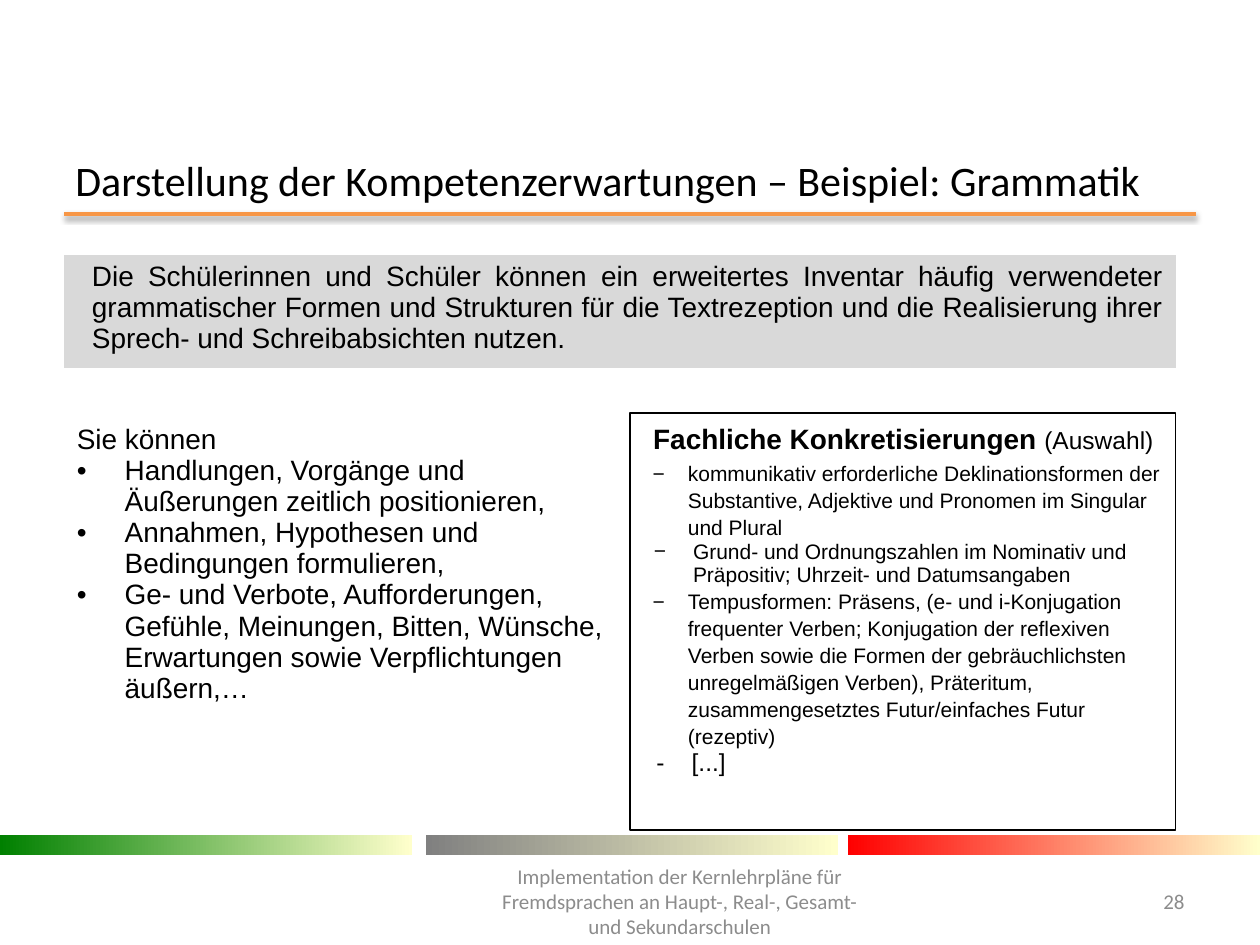
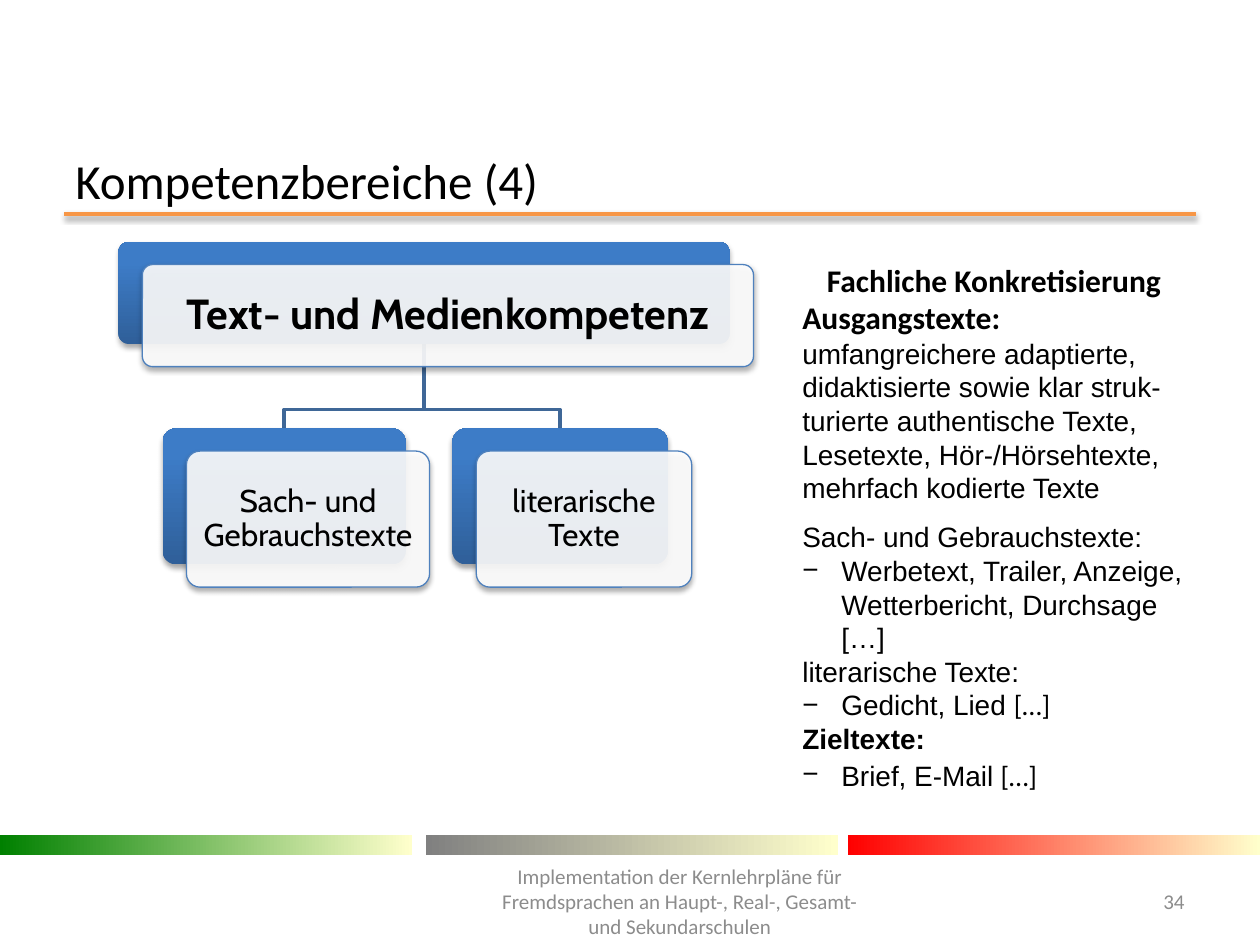
from dataclasses import dataclass
from typing import NamedTuple

from lxml.etree import SubElement
from pptx import Presentation
from pptx.dml.color import RGBColor
from pptx.enum.shapes import MSO_CONNECTOR, MSO_SHAPE
from pptx.enum.text import MSO_ANCHOR, PP_ALIGN
from pptx.oxml.ns import qn
from pptx.util import Inches, Pt


@dataclass(frozen=True)
class Theme:
    """Colours, fonts and type sizes of the whole deck."""
    ink: str = "000000"
    muted: str = "8C8C8C"
    white: str = "FFFFFF"
    rule: str = "F79646"
    statement: str = "D9D9D9"
    cream: str = "FFFFCC"
    bands: tuple[str, ...] = ("008000", "808080", "FF0000")
    node_dark: str = "2F5F99"
    node_light: str = "3D7CC7"
    node_edge: str = "4F81BD"
    branch: str = "3F6797"
    head_font: str = "Calibri"
    body_font: str = "Arial"
    node_font: str = "Cabin"
    footer: int = 12
    small: int = 12
    note: int = 14
    body: int = 16
    heading: int = 18
    root: int = 24
    long_title: int = 24
    title: int = 28


THEME = Theme()
PLAIN_TABLE = "{2D5ABB26-0587-4C30-8999-92F81FD0307C}"
FOOTER = ("Implementation der Kernlehrpläne für Fremdsprachen "
          "an Haupt-, Real-, Gesamt- und Sekundarschulen")


class Box(NamedTuple):
    """Left, top, width and height in inches."""
    left: float
    top: float
    width: float
    height: float

    def lengths(self) -> tuple:
        """Return the four sides as lengths."""
        return tuple(Inches(side) for side in self)


class Span(NamedTuple):
    """A run, with what differs from its paragraph."""
    text: str
    size: int | None = None
    font: str | None = None
    bold: bool | None = None


@dataclass(frozen=True)
class Para:
    """A paragraph; left and hang are its indents in inches."""
    spans: tuple[Span, ...]
    size: int = THEME.body
    font: str = THEME.body_font
    bold: bool = False
    color: str = THEME.ink
    align: PP_ALIGN | None = None
    spacing: float | None = None
    before: int | None = None
    left: float = 0
    hang: float = 0
    bullet: str = ""


class Node(NamedTuple):
    """A diagram node: back card, label, type size, weight and inset."""
    box: Box
    label: str
    size: int
    bold: bool
    inset: float


def para(text: str, **style) -> Para:
    """Make a paragraph of one run."""
    return Para((Span(text),), **style)


def rgb(code: str) -> RGBColor:
    """Turn a hex code into a colour."""
    return RGBColor.from_string(code)


def write(frame, paras: list[Para]) -> None:
    """Fill a text frame with paragraphs."""
    frame.word_wrap = True
    for index, item in enumerate(paras):
        paragraph = frame.add_paragraph() if index else frame.paragraphs[0]
        if item.left:
            properties = paragraph._p.get_or_add_pPr()
            properties.set("marL", str(Inches(item.left)))
            properties.set("indent", str(-Inches(item.hang)))
            if item.bullet:
                SubElement(properties, qn("a:buFont"), typeface=THEME.body_font)
                SubElement(properties, qn("a:buChar"), char=item.bullet)
        if item.align is not None:
            paragraph.alignment = item.align
        if item.spacing:
            paragraph.line_spacing = item.spacing
        if item.before:
            paragraph.space_before = Pt(item.before)
        font = paragraph.font
        font.size, font.name, font.bold = Pt(item.size), item.font, item.bold
        font.color.rgb = rgb(item.color)
        for span in item.spans:
            run = paragraph.add_run()
            run.text = span.text
            if span.size:
                run.font.size = Pt(span.size)
            if span.font:
                run.font.name = span.font
            if span.bold is not None:
                run.font.bold = span.bold


def add_text(slide, box: Box, paras: list[Para], anchor=MSO_ANCHOR.TOP) -> None:
    """Add a wrapping text box."""
    frame = slide.shapes.add_textbox(*box.lengths()).text_frame
    frame.vertical_anchor = anchor
    write(frame, paras)


def add_shadow(drawn, alpha: int, distance: float) -> None:
    """Give a shape or connector a soft shadow below it."""
    effects = SubElement(drawn._element.spPr, qn("a:effectLst"))
    outer = SubElement(effects, qn("a:outerShdw"), blurRad=str(Pt(3.1)),
                       dist=str(Pt(distance)), dir="5400000", rotWithShape="0")
    color = SubElement(outer, qn("a:srgbClr"), val=THEME.ink)
    SubElement(color, qn("a:alpha"), val=str(alpha * 1000))


def fill_gradient(shape, start: str, end: str, angle: int, reach: float = 1) -> None:
    """Fill with two colours, the second reached at a share of the way."""
    shape.fill.gradient()
    shape.fill.gradient_angle = angle
    first, last = shape.fill.gradient_stops
    first.color.rgb, first.position = rgb(start), 0
    last.color.rgb, last.position = rgb(end), reach


def add_frame(slide, title: str, title_size: int, number: int) -> None:
    """Draw title, rule, colour bands and footer."""
    rule = slide.shapes.add_connector(
        MSO_CONNECTOR.STRAIGHT, Inches(0.51), Inches(1.7), Inches(9.49), Inches(1.7))
    rule.line.color.rgb, rule.line.width = rgb(THEME.rule), Pt(2)
    add_shadow(rule, 38, 1.6)
    for left, color in zip((0, 3.38, 6.73), THEME.bands):
        band = slide.shapes.add_shape(
            MSO_SHAPE.RECTANGLE, *Box(left, 6.63, 3.27, 0.16).lengths())
        fill_gradient(band, color, THEME.cream, 0)
        band.line.fill.background()
        band.shadow.inherit = False
    add_text(slide, Box(0.5, 1.23, 9, 0.39),
             [para(title, size=title_size, font=THEME.head_font)], MSO_ANCHOR.MIDDLE)
    for box, text, align in ((Box(3.82, 6.95, 3.15, 0.4), FOOTER, PP_ALIGN.CENTER),
                             (Box(8.86, 6.95, 0.64, 0.4), str(number), PP_ALIGN.RIGHT)):
        add_text(slide, box, [para(text, size=THEME.footer, font=THEME.head_font,
                                   color=THEME.muted, align=align)], MSO_ANCHOR.MIDDLE)


def add_grammar_table(slide) -> None:
    """Draw the expectations table and the border of its details."""
    table = slide.shapes.add_table(3, 2, *Box(0.51, 2.02, 8.82, 4.34).lengths()).table
    table.first_row = table.horz_banding = False
    table._tbl.tblPr.find(qn("a:tableStyleId")).text = PLAIN_TABLE
    for column, width in zip(table.columns, (4.5, 4.32)):
        column.width = Inches(width)
    for row, height in zip(table.rows, (0.78, 0.36, 3.2)):
        row.height = Inches(height)
    for index, color in enumerate((THEME.statement, THEME.white)):
        table.cell(index, 0).merge(table.cell(index, 1))
        for column in range(2):
            cell = table.cell(index, column)
            cell.fill.solid()
            cell.fill.fore_color.rgb = rgb(color)
            cell.text_frame.paragraphs[0].font.size = Pt(THEME.small)
    abilities, details = table.cell(2, 0), table.cell(2, 1)
    for cell in (abilities, details):
        cell.fill.background()

    write(table.cell(0, 0).text_frame, [para(
        "Die Schülerinnen und Schüler können ein erweitertes Inventar häufig "
        "verwendeter grammatischer Formen und Strukturen für die Textrezeption und "
        "die Realisierung ihrer Sprech- und Schreibabsichten nutzen.",
        align=PP_ALIGN.JUSTIFY, left=0.12)])
    goals = ("Handlungen, Vorgänge und Äußerungen zeitlich positionieren,",
             "Annahmen, Hypothesen und Bedingungen formulieren,",
             "Ge- und Verbote, Aufforderungen, Gefühle, Meinungen, Bitten, Wünsche, "
             "Erwartungen sowie Verpflichtungen äußern,…")
    write(abilities.text_frame, [para("Sie können", spacing=1.15)] + [
        para(goal, left=0.38, hang=0.38, bullet="•") for goal in goals])
    loose = dict(size=THEME.small, spacing=1.15, left=0.35, hang=0.28, bullet="−")
    write(details.text_frame, [
        Para((Span("Fachliche Konkretisierungen ", bold=True),
              Span("(Auswahl)", THEME.note)), align=PP_ALIGN.CENTER, spacing=1.15),
        para("kommunikativ erforderliche Deklinationsformen der Substantive, "
             "Adjektive und Pronomen im Singular und Plural", before=2, **loose),
        para("Grund- und Ordnungszahlen im Nominativ und Präpositiv; Uhrzeit- und "
             "Datumsangaben", size=THEME.small, left=0.39, hang=0.31, bullet="−"),
        para("Tempusformen: Präsens, (e- und i-Konjugation frequenter Verben; "
             "Konjugation der reflexiven Verben sowie die Formen der gebräuchlichsten "
             "unregelmäßigen Verben), Präteritum, zusammengesetztes Futur/einfaches "
             "Futur (rezeptiv)", **loose),
        para("[...]", size=THEME.note, left=0.38, hang=0.28, bullet="-")])

    border = slide.shapes.add_shape(
        MSO_SHAPE.RECTANGLE, *Box(5, 3.28, 4.33, 3.31).lengths())
    border.fill.background()
    border.line.color.rgb, border.line.width = rgb(THEME.ink), Pt(1)
    border.shadow.inherit = False


def add_branch(slide, parent: Box, child: Box) -> None:
    """Draw the bent line from a parent card to a child card."""
    start = parent.left + parent.width / 2
    end = child.left + child.width / 2
    bend = child.top - 0.15
    points = [(start, bend), (end, bend), (end, child.top)]
    builder = slide.shapes.build_freeform(
        Inches(start), Inches(parent.top + parent.height))
    builder.add_line_segments([(Inches(x), Inches(y)) for x, y in points], close=False)
    branch = builder.convert_to_shape()
    branch.fill.background()
    branch.line.color.rgb, branch.line.width = rgb(THEME.branch), Pt(2)
    branch.shadow.inherit = False


def add_node(slide, node: Node) -> None:
    """Draw a blue card with a translucent label panel shifted over it."""
    box = node.box
    front = box._replace(left=box.left + 0.19, top=box.top + 0.18)
    card, panel = (slide.shapes.add_shape(MSO_SHAPE.ROUNDED_RECTANGLE, *place.lengths())
                   for place in (box, front))
    fill_gradient(card, THEME.node_dark, THEME.node_light, 90, 0.8)
    card.line.fill.background()
    panel.fill.solid()
    panel.fill.fore_color.rgb = rgb(THEME.white)
    tint = panel._element.spPr.find(qn("a:solidFill")).find(qn("a:srgbClr"))
    SubElement(tint, qn("a:alpha"), val="90000")
    panel.line.color.rgb, panel.line.width = rgb(THEME.node_edge), Pt(0.75)
    for layer in (card, panel):
        layer.adjustments[0] = 0.1
        add_shadow(layer, 35, 1.8)
    frame = panel.text_frame
    frame.margin_left = frame.margin_right = Inches(node.inset)
    frame.margin_top = frame.margin_bottom = Inches(node.inset)
    frame.vertical_anchor = MSO_ANCHOR.MIDDLE
    write(frame, [para(node.label, size=node.size, font=THEME.node_font,
                       bold=node.bold, align=PP_ALIGN.CENTER, spacing=0.9)])


def add_competence_tree(slide) -> None:
    """Draw the competence area and its two kinds of text."""
    root = Node(Box(0.94, 1.92, 4.85, 0.81), "Text- und Medienkompetenz",
                THEME.root, True, 0.1)
    kinds = [Node(Box(left, 3.4, width, 1.08), label, THEME.heading, False, 0.07)
             for left, width, label in ((1.29, 1.93, "Sach- und Gebrauchstexte"),
                                        (3.59, 1.71, "literarische Texte"))]
    for kind in kinds:
        add_branch(slide, root.box, kind.box)
    for node in (root, *kinds):
        add_node(slide, node)


def add_text_types(slide) -> None:
    """Write the list of source and target texts."""
    heading = dict(size=THEME.heading, font=THEME.head_font, bold=True)
    dash = dict(left=0.31, hang=0.31, bullet="−")
    more = Span("[…]", font=THEME.head_font)
    add_text(slide, Box(6.27, 2.02, 3.24, 4.64), [
        para("Fachliche Konkretisierung", align=PP_ALIGN.CENTER, **heading),
        para("Ausgangstexte:", **heading),
        para("umfangreichere adaptierte, didaktisierte sowie klar struk-turierte "
             "authentische Texte, Lesetexte, Hör-/Hörsehtexte, mehrfach kodierte Texte"),
        para("Sach- und Gebrauchstexte:", before=9),
        para("Werbetext, Trailer, Anzeige, Wetterbericht, Durchsage […]", **dash),
        para("literarische Texte:"),
        Para((Span("Gedicht, Lied "), more), **dash),
        para("Zieltexte:", bold=True),
        Para((Span("Brief, E-Mail"), Span(" ", THEME.heading, THEME.head_font), more),
             **dash)])


def main() -> None:
    """Build and save the deck."""
    deck = Presentation()
    deck.slide_width, deck.slide_height = Inches(10), Inches(7.5)
    blank = deck.slide_layouts[6]

    grammar = deck.slides.add_slide(blank)
    add_frame(grammar, "Darstellung der Kompetenzerwartungen – Beispiel: Grammatik",
              THEME.long_title, 28)
    add_grammar_table(grammar)

    competences = deck.slides.add_slide(blank)
    add_frame(competences, "Kompetenzbereiche (4)", THEME.title, 34)
    add_competence_tree(competences)
    add_text_types(competences)

    deck.save("out.pptx")


if __name__ == "__main__":
    main()
